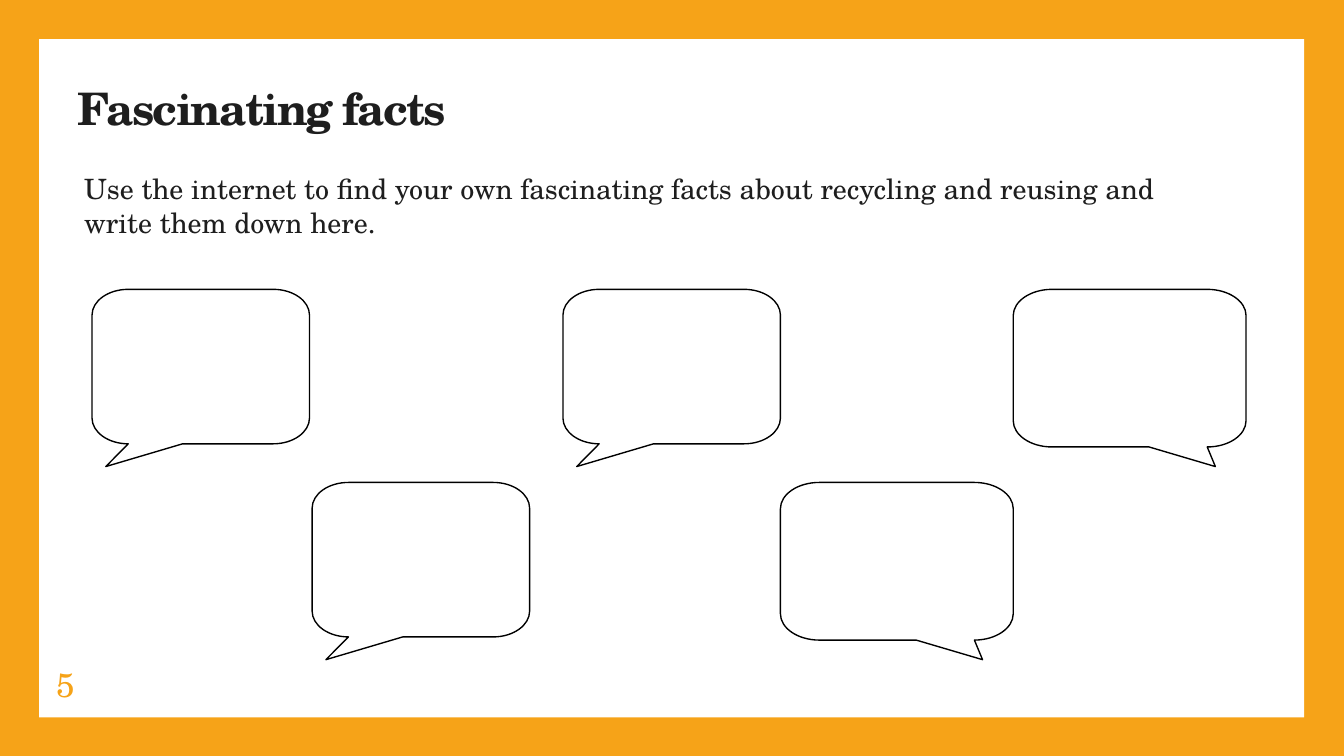
from dataclasses import dataclass

from lxml.etree import SubElement
from pptx import Presentation
from pptx.dml.color import RGBColor
from pptx.enum.shapes import MSO_SHAPE
from pptx.enum.text import MSO_AUTO_SIZE
from pptx.oxml.ns import qn
from pptx.util import Cm, Pt


@dataclass(frozen=True)
class Theme:
    font: str = "TeX Gyre Schola"
    accent: RGBColor = RGBColor(0xF6, 0xA3, 0x18)
    paper: RGBColor = RGBColor(0xFF, 0xFF, 0xFF)
    ink: RGBColor = RGBColor(0x1E, 0x1E, 0x1E)
    outline: RGBColor = RGBColor(0, 0, 0)
    title: int = 24
    number: int = 18
    body: int = 15


@dataclass(frozen=True)
class Bubble:
    """Speech bubble measures in cm, with the tail on the left or right."""
    width: float
    height: float
    tail_x: float
    tail_left: bool
    tail_y: float = 3.35

    def segments(self):
        """End point of each segment, with the box corner it rounds, if any."""
        w, h = self.width, self.height
        rx, ry = w / 6, h / 6
        tip = (self.tail_x, self.tail_y)
        tail = [tip, (w * 5 / 12, h)] if self.tail_left else [(w * 7 / 12, h), tip]
        return [
            ((rx, 0), None),
            ((0, ry), (0, 0)),
            ((0, h - ry), None),
            ((rx, h), (0, h)),
            *((point, None) for point in tail),
            ((w - rx, h), None),
            ((w, h - ry), (w, h)),
            ((w, ry), None),
            ((w - rx, 0), (w, 0)),
        ]


class SlideBuilder:
    def __init__(self, s, theme):
        self.s, self.theme = s, theme

    def background(self, color):
        fill = self.s.background.fill
        fill.solid()
        fill.fore_color.rgb = color

    def panel(self, x, y, w, h):
        sp = self.s.shapes.add_shape(MSO_SHAPE.RECTANGLE, Cm(x), Cm(y), Cm(w), Cm(h))
        sp.shadow.inherit = False
        sp.fill.solid()
        sp.fill.fore_color.rgb = self.theme.paper
        sp.line.fill.background()

    def text(self, words, x, y, w, h, size, color, bold=False,
             inset=0.13, wrap=True, grow=True, spacing=None):
        tf = self.s.shapes.add_textbox(Cm(x), Cm(y), Cm(w), Cm(h)).text_frame
        tf.margin_left = tf.margin_right = tf.margin_top = tf.margin_bottom = Cm(inset)
        tf.word_wrap = wrap
        tf.auto_size = MSO_AUTO_SIZE.SHAPE_TO_FIT_TEXT if grow else MSO_AUTO_SIZE.NONE
        p = tf.paragraphs[0]
        p.font.name, p.font.size, p.font.bold = self.theme.font, Pt(size), bold
        p.font.color.rgb = color
        r = p.add_run()
        r.text = words
        if spacing is not None:
            r._r.get_or_add_rPr().set("spc", str(round(spacing * 100)))

    def bubble(self, x, y, shape):
        segments = shape.segments()
        points = [(Cm(x + px), Cm(y + py)) for (px, py), _ in segments]
        builder = self.s.shapes.build_freeform(*points[0])
        builder.add_line_segments(points[1:], close=True)
        sp = builder.convert_to_shape()
        self.round_corners(sp, segments)
        sp.shadow.inherit = False
        sp.fill.solid()
        sp.fill.fore_color.rgb = self.theme.paper
        sp.line.color.rgb = self.theme.outline

    def round_corners(self, sp, segments):
        """Turn the straight corner segments into quarter-ellipse curves."""
        kappa = 0.55
        lines = list(sp._element.iter(qn("a:lnTo")))
        for line, (start, _), (end, corner) in zip(lines, segments, segments[1:]):
            if corner is None:
                continue
            line.tag = qn("a:cubicBezTo")
            for i, anchor in enumerate((start, end)):
                cx, cy = (a + kappa * (c - a) for a, c in zip(anchor, corner))
                pt = SubElement(line, qn("a:pt"), x=str(Cm(cx)), y=str(Cm(cy)))
                line.insert(i, pt)


def main():
    prs = Presentation()
    prs.slide_width, prs.slide_height = Cm(25.4), Cm(14.29)
    theme = Theme()
    slide = SlideBuilder(prs.slides.add_slide(prs.slide_layouts[6]), theme)

    # Frame and page number
    slide.background(theme.accent)
    slide.panel(0.74, 0.74, 23.91, 12.82)
    slide.text("5", 0.93, 12.42, 0.58, 1.02, theme.number, theme.accent, wrap=False)

    # Title and task
    slide.text("Fascinating facts", 1.47, 1.52, 21.11, 1.3, theme.title, theme.ink,
               bold=True, inset=0, grow=False, spacing=-1)
    slide.text("Use the internet to find your own fascinating facts about recycling "
               "and reusing and write them down here.",
               1.46, 3.12, 21.82, 1.55, theme.body, theme.ink)

    # Speech bubbles in two staggered rows
    left_tail = Bubble(4.11, 2.92, 0.26, tail_left=True)
    right_tail = Bubble(4.4, 2.98, 3.82, tail_left=False)
    upper, lower = 5.47, 9.12
    for x, y, shape in [
        (1.74, upper, left_tail),
        (19.15, upper, right_tail),
        (10.64, upper, left_tail),
        (5.9, lower, left_tail),
        (14.75, lower, right_tail),
    ]:
        slide.bubble(x, y, shape)

    prs.save("out.pptx")


if __name__ == "__main__":
    main()
